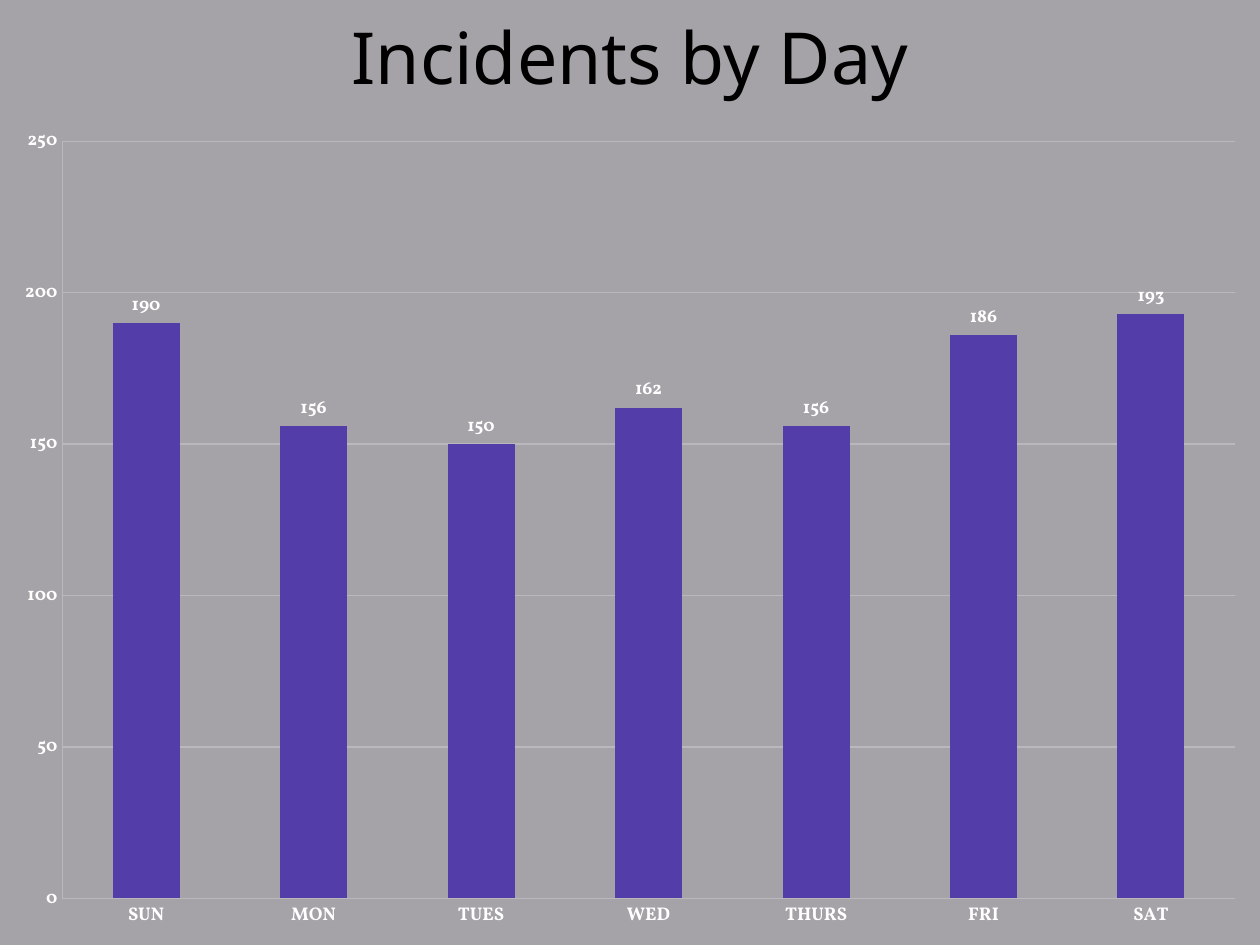
from dataclasses import dataclass

from pptx import Presentation
from pptx.chart.data import CategoryChartData
from pptx.dml.color import RGBColor
from pptx.enum.chart import XL_CHART_TYPE, XL_LABEL_POSITION, XL_TICK_MARK
from pptx.enum.text import MSO_ANCHOR, PP_ALIGN
from pptx.util import Cm, Pt


@dataclass(frozen=True)
class Theme:
    background: RGBColor = RGBColor.from_string("A5A3A8")
    heading: RGBColor = RGBColor.from_string("000000")
    labels: RGBColor = RGBColor.from_string("FFFFFF")
    bars: RGBColor = RGBColor.from_string("533EA9")
    grid: RGBColor = RGBColor.from_string("BAB8BC")
    heading_font: str = "Noto Sans"
    chart_font: str = "Vollkorn"
    heading_size: Pt = Pt(41)
    chart_size: Pt = Pt(10.5)
    line_width: Pt = Pt(0.75)


THEME = Theme()
INCIDENTS = {
    "SUN": 190,
    "MON": 156,
    "TUES": 150,
    "WED": 162,
    "THURS": 156,
    "FRI": 186,
    "SAT": 193,
}


def add_heading(slide, left, top, width, height):
    heading = slide.shapes.add_textbox(left, top, width, height).text_frame
    heading.word_wrap = True
    heading.vertical_anchor = MSO_ANCHOR.MIDDLE
    line = heading.paragraphs[0]
    line.text = "Incidents by Day"
    line.alignment = PP_ALIGN.CENTER
    line.font.name = THEME.heading_font
    line.font.size = THEME.heading_size
    line.font.color.rgb = THEME.heading


def style_line(line):
    line.color.rgb = THEME.grid
    line.width = THEME.line_width


def add_incident_chart(slide, left, top, width, height):
    incidents = CategoryChartData()
    incidents.categories = list(INCIDENTS)
    incidents.add_series("Series 1", list(INCIDENTS.values()))
    chart = slide.shapes.add_chart(
        XL_CHART_TYPE.COLUMN_CLUSTERED, left, top, width, height, incidents
    ).chart
    chart.has_legend = False
    chart.has_title = False
    chart.font.name = THEME.chart_font
    chart.font.size = THEME.chart_size
    chart.font.bold = True
    chart.font.color.rgb = THEME.labels

    days, counts = chart.category_axis, chart.value_axis
    for axis in (days, counts):
        axis.major_tick_mark = XL_TICK_MARK.NONE
        axis.minor_tick_mark = XL_TICK_MARK.NONE
        style_line(axis.format.line)
    counts.minimum_scale = 0
    counts.maximum_scale = 250
    counts.major_unit = 50
    counts.has_major_gridlines = True
    style_line(counts.major_gridlines.format.line)

    columns = chart.plots[0]
    columns.gap_width = 150
    columns.vary_by_categories = False
    fill = columns.series[0].format.fill
    fill.solid()
    fill.fore_color.rgb = THEME.bars
    columns.has_data_labels = True
    columns.data_labels.show_value = True
    columns.data_labels.position = XL_LABEL_POSITION.OUTSIDE_END


def main():
    deck = Presentation()
    deck.slide_width, deck.slide_height = Cm(25.4), Cm(19.05)
    slide = deck.slides.add_slide(deck.slide_layouts[6])
    slide.background.fill.solid()
    slide.background.fill.fore_color.rgb = THEME.background
    add_heading(slide, Cm(0), Cm(0.08), deck.slide_width, Cm(2.11))
    chart_top = Cm(2.26)
    add_incident_chart(
        slide, Cm(0), chart_top, deck.slide_width, deck.slide_height - chart_top
    )
    deck.save("out.pptx")


if __name__ == "__main__":
    main()
